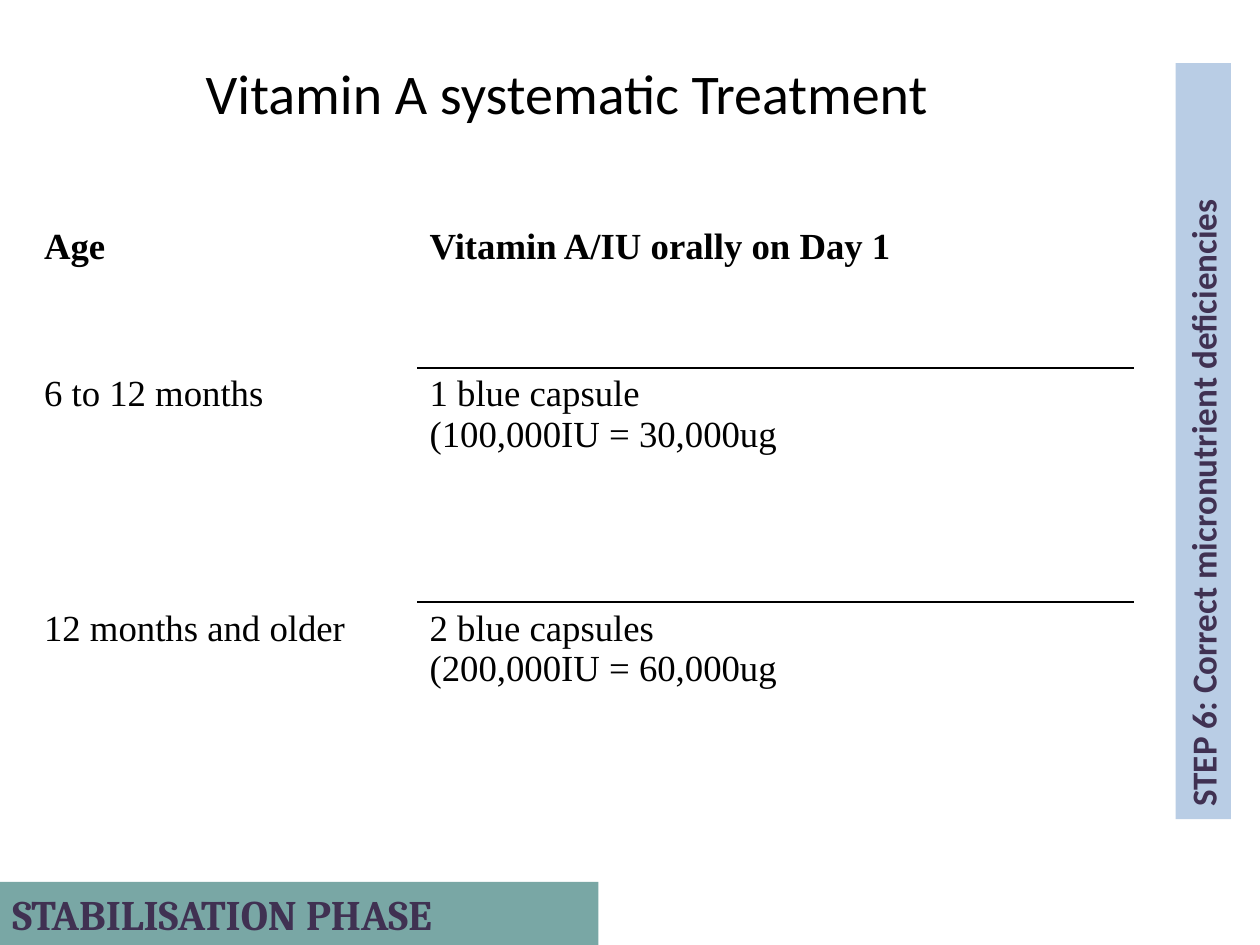
import dataclasses

import pptx
import pptx.dml.color
import pptx.enum.shapes
import pptx.enum.text
import pptx.oxml.ns
import pptx.util
from lxml import etree
from pptx.util import Inches


@dataclasses.dataclass(frozen=True)
class Theme:
    black: str = "000000"
    purple: str = "403152"
    blue: str = "B9CDE5"
    teal: str = "79A7A5"
    title_size: int = 32
    table_size: int = 21
    step_size: int = 20
    phase_size: int = 24
    sans: str = "Calibri"
    serif: str = "Times New Roman"
    phase_font: str = "Cambria"


THEME = Theme()
COLUMN_WIDTHS = (3.06, 5.69)
ROW_HEIGHTS = (1.17, 1.86, 1.9)
DOSES = (
    ("Age", "Vitamin A/IU orally on Day 1"),
    ("6 to 12 months", "1 blue capsule\n(100,000IU = 30,000ug"),
    ("12 months and older", "2 blue capsules\n(200,000IU = 60,000ug"),
)


def color(value):
    return pptx.dml.color.RGBColor.from_string(value)


def format_text(text_frame, font, size, text_color, alignment, bold=False):
    values = {"name": font, "size": pptx.util.Pt(size), "bold": bold}
    for paragraph in text_frame.paragraphs:
        paragraph.alignment = alignment
        for run in paragraph.runs:
            for name, value in values.items():
                setattr(run.font, name, value)
            run.font.color.rgb = color(text_color)


def add_title(slide, text):
    title = slide.shapes.title
    place = {"left": 0, "top": 0.3, "width": 9, "height": 0.87}
    for name, value in place.items():
        setattr(title, name, Inches(value))
    title.text_frame.text = text
    title.text_frame.vertical_anchor = pptx.enum.text.MSO_ANCHOR.MIDDLE
    format_text(title.text_frame, THEME.sans, THEME.title_size, THEME.black,
                pptx.enum.text.PP_ALIGN.CENTER)


def set_borders(cell, ruled_sides):
    """Draw a thin line on the given sides and no line on the others."""
    properties = cell._tc.get_or_add_tcPr()
    for side in "LRTB":
        line = etree.SubElement(properties, pptx.oxml.ns.qn(f"a:ln{side}"),
                                w=str(pptx.util.Pt(1)))
        if side in ruled_sides:
            fill = etree.SubElement(line, pptx.oxml.ns.qn("a:solidFill"))
            etree.SubElement(fill, pptx.oxml.ns.qn("a:srgbClr"), val=THEME.black)
        else:
            etree.SubElement(line, pptx.oxml.ns.qn("a:noFill"))


def fill_cell(cell, text, bold, ruled_sides):
    cell.text_frame.text = text
    format_text(cell.text_frame, THEME.serif, THEME.table_size, THEME.black,
                pptx.enum.text.PP_ALIGN.LEFT, bold)
    for paragraph in cell.text_frame.paragraphs:
        properties = paragraph._p.get_or_add_pPr()
        properties.set("marL", str(Inches(0.38)))
        properties.set("indent", str(Inches(-0.38)))
    set_borders(cell, ruled_sides)
    cell.fill.background()


def add_dose_table(slide):
    table = slide.shapes.add_table(
        len(DOSES), len(COLUMN_WIDTHS), Inches(0.25), Inches(1.75),
        Inches(sum(COLUMN_WIDTHS)), Inches(sum(ROW_HEIGHTS))).table
    table.horz_banding = False
    for column, width in zip(table.columns, COLUMN_WIDTHS):
        column.width = Inches(width)
    for row, height in zip(table.rows, ROW_HEIGHTS):
        row.height = Inches(height)
    last_row = len(DOSES) - 1
    for row_index, texts in enumerate(DOSES):
        rules = ("T" if row_index > 0 else "") + ("B" if row_index < last_row else "")
        for column_index, text in enumerate(texts):
            fill_cell(table.cell(row_index, column_index), text,
                      bold=row_index == 0,
                      ruled_sides=rules if column_index == 1 else "")


def add_banner(slide, text, place, fill, font, size, rotation=0):
    banner = slide.shapes.add_shape(pptx.enum.shapes.MSO_SHAPE.RECTANGLE,
                                    *map(Inches, place))
    banner.rotation = rotation
    banner.shadow.inherit = False
    banner.fill.solid()
    banner.fill.fore_color.rgb = color(fill)
    banner.line.fill.background()
    frame = banner.text_frame
    frame.text = text
    frame.word_wrap = True
    frame.auto_size = pptx.enum.text.MSO_AUTO_SIZE.SHAPE_TO_FIT_TEXT
    frame.vertical_anchor = pptx.enum.text.MSO_ANCHOR.TOP
    format_text(frame, font, size, THEME.purple,
                pptx.enum.text.PP_ALIGN.LEFT, bold=True)


def main():
    presentation = pptx.Presentation()
    presentation.slide_width = Inches(10)
    presentation.slide_height = Inches(7.5)
    slide = presentation.slides.add_slide(presentation.slide_layouts[5])
    add_title(slide, "Vitamin A systematic Treatment")
    add_dose_table(slide)
    add_banner(slide, "STEP 6: Correct micronutrient deficiencies",
               (6.55, 3.28, 6, 0.44), THEME.blue, THEME.sans,
               THEME.step_size, rotation=270)
    add_banner(slide, "STABILISATION PHASE", (0, 7, 4.75, 0.5),
               THEME.teal, THEME.phase_font, THEME.phase_size)
    presentation.save("out.pptx")


if __name__ == "__main__":
    main()
